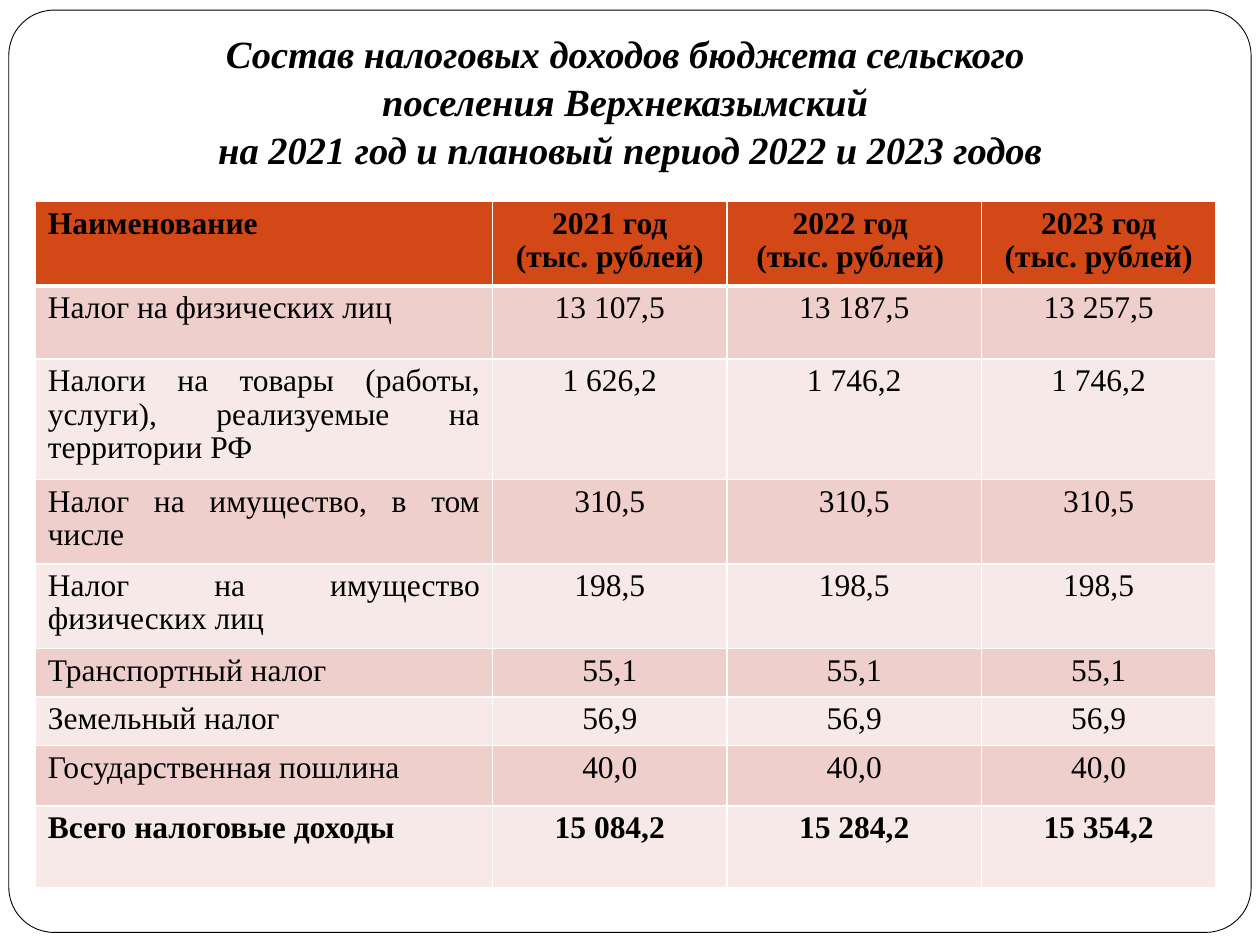
from pptx import Presentation
from pptx.dml.color import RGBColor
from pptx.enum.shapes import MSO_SHAPE as Shape
from pptx.enum.text import MSO_ANCHOR as Anchor, PP_ALIGN as Align
from pptx.oxml import parse_xml
from pptx.oxml.ns import nsdecls
from pptx.util import Inches, Pt

FONT = "Times New Roman"
BLACK, WHITE = "000000", "FFFFFF"
HEADER_FILL, BAND_FILLS = "D34817", ("EFCFCC", "F7E9E8")

TITLE = ("Состав налоговых доходов бюджета сельского \v"
         "поселения Верхнеказымский \v"
         "на 2021 год и плановый период 2022 и 2023 годов")
HEADER = ("Наименование", "2021 год\n (тыс. рублей) ",
          "2022 год \n(тыс. рублей) ", "2023 год\n (тыс. рублей) ")
TAXES = (
    ("Налог на физических лиц ", "13 107,5", "13 187,5", "13 257,5"),
    ("Налоги на товары (работы, услуги), реализуемые на территории РФ",
     "1 626,2", "1 746,2", "1 746,2"),
    ("Налог на имущество, в том числе ", "310,5", "310,5", "310,5"),
    ("Налог на имущество физических лиц", "198,5", "198,5", "198,5"),
    ("Транспортный налог", "55,1", "55,1", "55,1"),
    ("Земельный налог ", "56,9", "56,9", "56,9"),
    ("Государственная пошлина ", "40,0", "40,0", "40,0"),
)
TOTAL = ("Всего налоговые доходы ", "15 084,2", "15 284,2", "15 354,2")
COLUMN_WIDTHS = (3.63, 1.86, 2.02, 1.86)
ROW_HEIGHTS = (0.65, 0.58, 0.93, 0.65, 0.65, 0.38, 0.38, 0.48, 0.65)


def rgb(value):
    return RGBColor.from_string(value)


def write(frame, text, size=18, bold=False, italic=False, color=BLACK,
          align=Align.CENTER, spacing=0.95):
    """Fill a text frame; a newline starts a paragraph, a \\v breaks a line."""
    frame.word_wrap = True
    frame.text = text
    for paragraph in frame.paragraphs:
        paragraph.alignment = align
        paragraph.line_spacing = spacing
        for run in paragraph.runs:
            font = run.font
            font.name, font.size = FONT, Pt(size)
            font.bold, font.italic = bold, italic
            font.color.rgb = rgb(color)


def set_borders(cell, bottom=1):
    properties = cell._tc.get_or_add_tcPr()
    sides = (("lnL", 1), ("lnR", 1), ("lnT", 1), ("lnB", bottom))
    for position, (side, width) in enumerate(sides):
        properties.insert(position, parse_xml(
            f'<a:{side} {nsdecls("a")} w="{Pt(width)}"><a:solidFill>'
            f'<a:srgbClr val="{WHITE}"/></a:solidFill></a:{side}>'))


def add_frame(slide, left, top, width, height):
    frame = slide.shapes.add_shape(Shape.ROUNDED_RECTANGLE, left, top, width, height)
    frame.adjustments[0] = 0.049
    frame.shadow.inherit = False
    frame.fill.solid()
    frame.fill.fore_color.rgb = rgb(WHITE)
    frame.line.color.rgb = rgb(BLACK)
    frame.line.width = Pt(0.5)


def add_title(slide, left, top, width, height):
    title = slide.shapes.add_textbox(left, top, width, height).text_frame
    title.vertical_anchor = Anchor.BOTTOM
    title.margin_bottom = Inches(0.1)
    write(title, TITLE, size=22, bold=True, italic=True, spacing=1.04)


def add_tax_table(slide, left, top, width, height):
    """Share the box out by the column widths and row heights."""
    rows = (HEADER, *TAXES, TOTAL)
    table = slide.shapes.add_table(len(rows), len(HEADER), left, top,
                                   width, height).table
    for column, share in zip(table.columns, COLUMN_WIDTHS):
        column.width = int(width * share / sum(COLUMN_WIDTHS))
    for row, share in zip(table.rows, ROW_HEIGHTS):
        row.height = int(height * share / sum(ROW_HEIGHTS))

    for r, texts in enumerate(rows):
        is_header = r == 0
        name_align = Align.LEFT if is_header else Align.JUSTIFY
        for c, text in enumerate(texts):
            cell = table.cell(r, c)
            write(cell.text_frame, text, bold=is_header or texts is TOTAL,
                  align=Align.CENTER if c else name_align)
            cell.fill.solid()
            cell.fill.fore_color.rgb = rgb(
                HEADER_FILL if is_header else BAND_FILLS[(r - 1) % 2])
            set_borders(cell, bottom=3 if is_header else 1)


def main():
    deck = Presentation()
    deck.slide_width, deck.slide_height = Inches(10), Inches(7.5)
    slide = deck.slides.add_slide(deck.slide_layouts[6])
    add_frame(slide, Inches(0.07), Inches(0.08), Inches(9.86), Inches(7.32))
    add_title(slide, Inches(0.5), Inches(0.21), Inches(9), Inches(1.26))
    add_tax_table(slide, Inches(0.28), Inches(1.6),
                  Inches(sum(COLUMN_WIDTHS)), Inches(sum(ROW_HEIGHTS)))
    deck.save("out.pptx")


if __name__ == "__main__":
    main()
